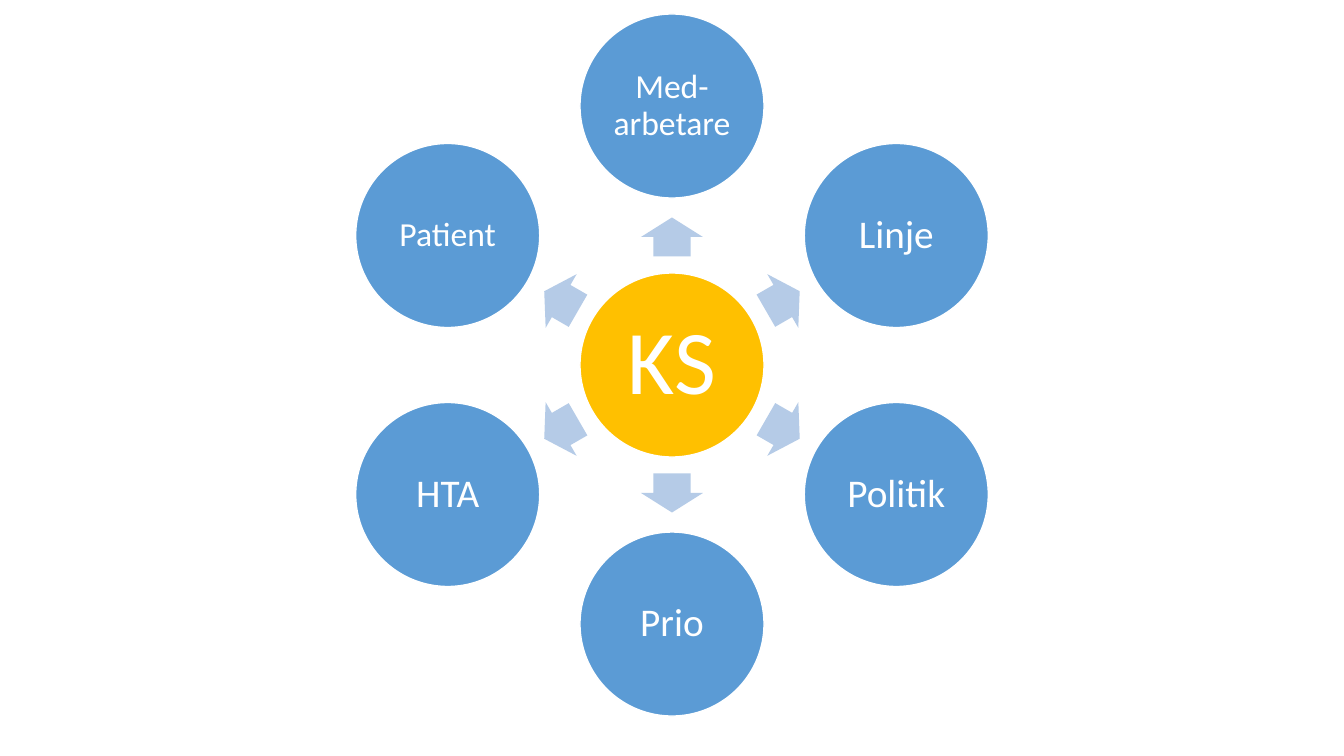
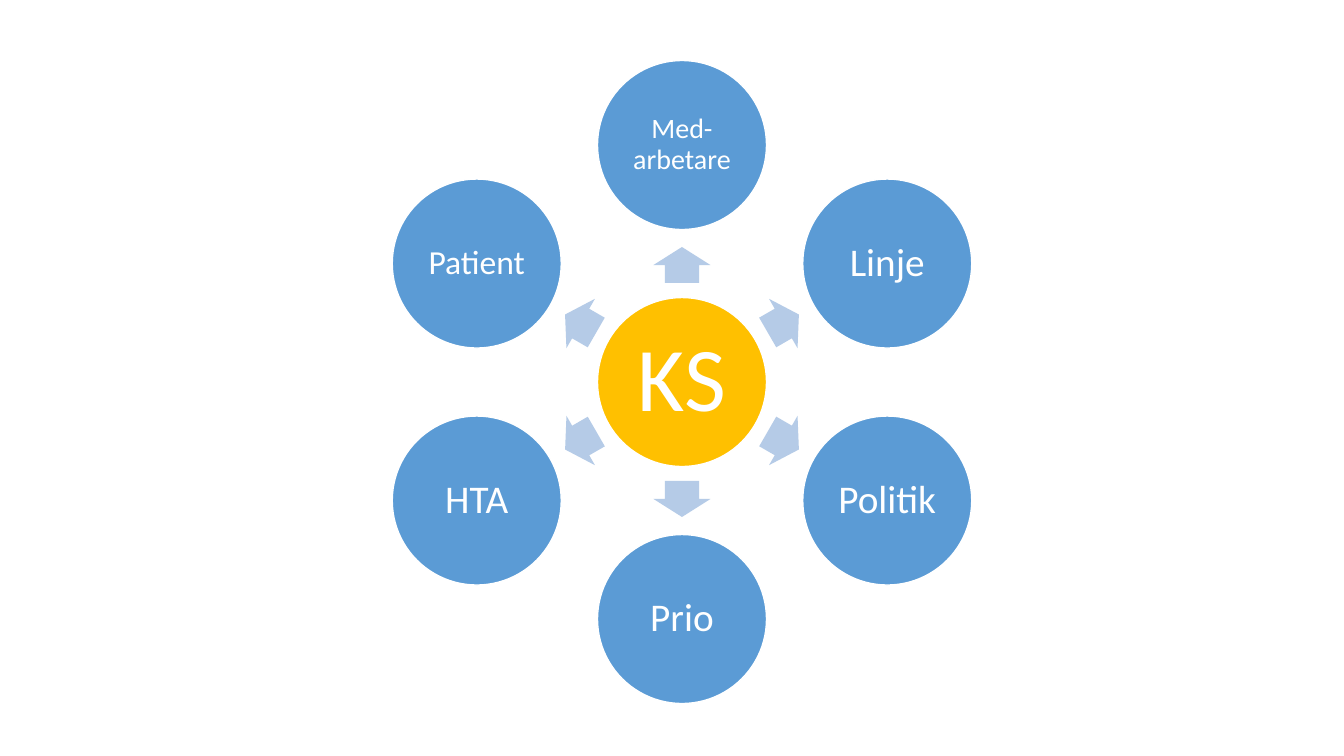
"""Two radial diagrams of the groups around KS."""
from dataclasses import dataclass
from math import cos, radians, sin

from pptx import Presentation
from pptx.dml.color import RGBColor
from pptx.enum.shapes import MSO_SHAPE
from pptx.enum.text import MSO_ANCHOR, PP_ALIGN
from pptx.shapes.autoshape import Shape
from pptx.shapes.group import GroupShape
from pptx.util import Emu, Pt

SLIDE_WIDTH = 1344
SLIDE_HEIGHT = 756
EMU_PER_PX = 12192000 / SLIDE_WIDTH


@dataclass(frozen=True)
class Theme:
    """Colours, font and type sizes shared by the slides."""

    hub: RGBColor = RGBColor(0xFF, 0xC0, 0x00)
    satellite: RGBColor = RGBColor(0x5B, 0x9B, 0xD5)
    arrow: RGBColor = RGBColor(0xB5, 0xCB, 0xE7)
    light: RGBColor = RGBColor(0xFF, 0xFF, 0xFF)
    font: str = "Calibri"
    hub_size: int = 65
    large: int = 28
    medium: int = 24
    small: int = 20
    line_width: int = 1


THEME = Theme()


@dataclass(frozen=True)
class Satellite:
    """A circle around the hub, with its label and type size."""

    label: str
    size: int = THEME.large


@dataclass(frozen=True)
class Wheel:
    """Geometry of one radial diagram in px, with its satellites clockwise."""

    center_x: int
    center_y: int
    diameter: int
    orbit: int
    arrow_orbit: int
    arrow_length: int
    arrow_breadth: int
    satellites: tuple[Satellite, ...]


OTHERS = (
    Satellite("Linje"),
    Satellite("Politik"),
    Satellite("Prio"),
    Satellite("HTA"),
    Satellite("Patient", THEME.medium),
)
WHEELS = (
    Wheel(672, 365, 184, 259, 128, 39, 62,
          (Satellite("Med-arbetare", THEME.medium), *OTHERS)),
    Wheel(682, 382, 169, 237, 117, 36, 57,
          (Satellite("Med-arbetare", THEME.small), *OTHERS)),
)


def px(length: float) -> Emu:
    """Turn px into EMU."""
    return Emu(round(length * EMU_PER_PX))


def add_centered(group: GroupShape, kind: MSO_SHAPE, center: tuple[float, float],
                 width: int, height: int, color: RGBColor) -> Shape:
    """Add a filled shape around its centre point."""
    x, y = center
    shape = group.shapes.add_shape(
        kind, px(x - width / 2), px(y - height / 2), px(width), px(height))
    shape.shadow.inherit = False
    shape.fill.solid()
    shape.fill.fore_color.rgb = color
    return shape


def add_circle(group: GroupShape, center: tuple[float, float], diameter: int,
               color: RGBColor, label: str, size: int) -> None:
    """Add a labelled circle whose text margins follow the type size."""
    circle = add_centered(group, MSO_SHAPE.OVAL, center, diameter, diameter, color)
    circle.line.color.rgb = THEME.light
    circle.line.width = Pt(THEME.line_width)
    frame = circle.text_frame
    frame.text = label
    frame.word_wrap = True
    frame.vertical_anchor = MSO_ANCHOR.MIDDLE
    margin = Pt(size / 10)
    frame.margin_left = frame.margin_right = margin
    frame.margin_top = frame.margin_bottom = margin
    paragraph = frame.paragraphs[0]
    paragraph.alignment = PP_ALIGN.CENTER
    paragraph.line_spacing = 0.9
    font = paragraph.runs[0].font
    font.name = THEME.font
    font.size = Pt(size)
    font.color.rgb = THEME.light


def add_arrow(group: GroupShape, wheel: Wheel, center: tuple[float, float],
              angle: float) -> None:
    """Add a block arrow that points away from the hub."""
    arrow = add_centered(group, MSO_SHAPE.RIGHT_ARROW, center,
                         wheel.arrow_length, wheel.arrow_breadth, THEME.arrow)
    arrow.line.fill.background()
    arrow.adjustments[0] = 0.6
    arrow.adjustments[1] = 0.5
    arrow.rotation = angle


def orbit_point(wheel: Wheel, radius: int, angle: float) -> tuple[float, float]:
    """Return the point at a clockwise angle and radius from the hub."""
    return (wheel.center_x + radius * cos(radians(angle)),
            wheel.center_y + radius * sin(radians(angle)))


def draw_wheel(group: GroupShape, wheel: Wheel) -> None:
    """Draw the hub, then each arrow and satellite from the top clockwise."""
    add_circle(group, (wheel.center_x, wheel.center_y), wheel.diameter,
               THEME.hub, "KS", THEME.hub_size)
    step = 360 / len(wheel.satellites)
    for index, satellite in enumerate(wheel.satellites):
        angle = (270 + index * step) % 360
        add_arrow(group, wheel, orbit_point(wheel, wheel.arrow_orbit, angle), angle)
        add_circle(group, orbit_point(wheel, wheel.orbit, angle), wheel.diameter,
                   THEME.satellite, satellite.label, satellite.size)


def main() -> None:
    """Build and save the presentation."""
    presentation = Presentation()
    presentation.slide_width = px(SLIDE_WIDTH)
    presentation.slide_height = px(SLIDE_HEIGHT)
    blank_layout = presentation.slide_layouts[6]
    for wheel in WHEELS:
        slide = presentation.slides.add_slide(blank_layout)
        draw_wheel(slide.shapes.add_group_shape(), wheel)
    presentation.save("out.pptx")


if __name__ == "__main__":
    main()
